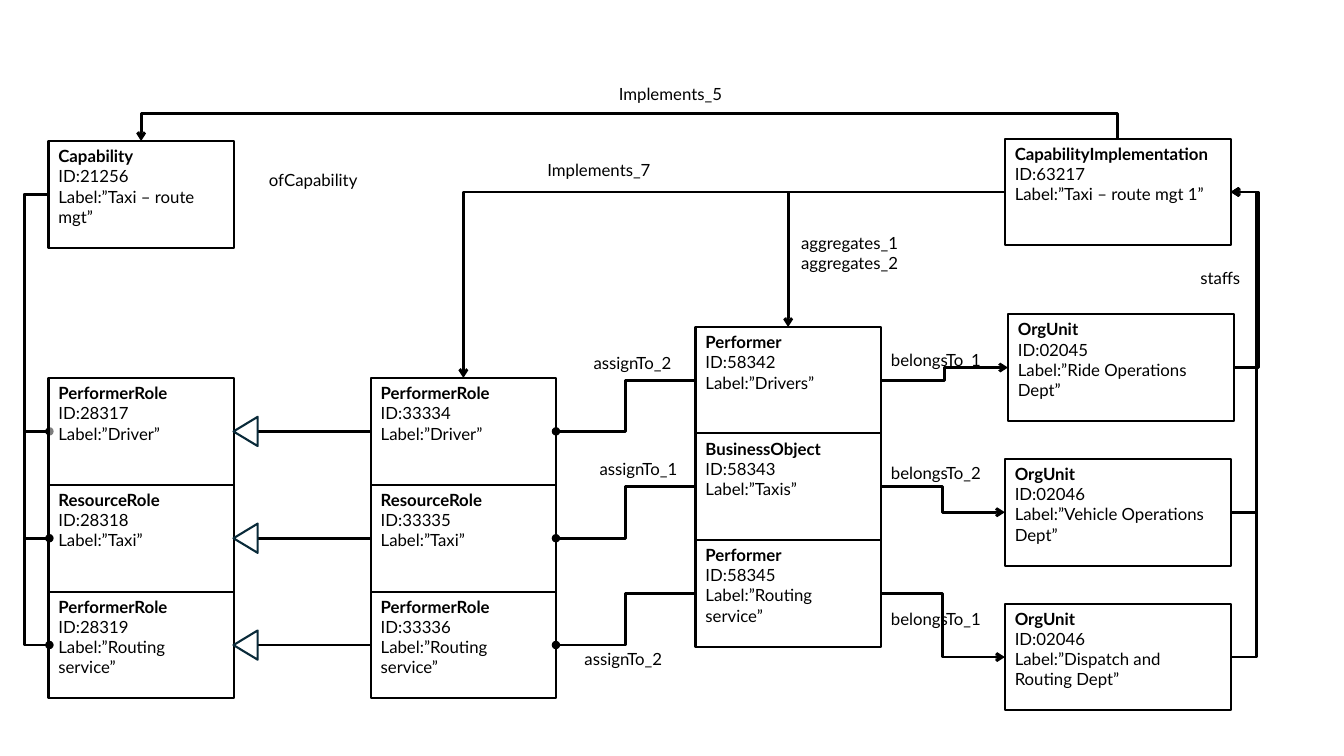
from lxml import etree
from pptx import Presentation
from pptx.dml.color import RGBColor
from pptx.enum.shapes import MSO_CONNECTOR, MSO_SHAPE
from pptx.enum.text import MSO_ANCHOR, MSO_AUTO_SIZE, PP_ALIGN
from pptx.oxml.ns import qn
from pptx.util import Pt

ELBOW, STRAIGHT = MSO_CONNECTOR.ELBOW, MSO_CONNECTOR.STRAIGHT
RECTANGLE, TRIANGLE = MSO_SHAPE.RECTANGLE, MSO_SHAPE.ISOSCELES_TRIANGLE
COLORS = {name: RGBColor.from_string(value) for name, value in
          {"ink": "000000", "paper": "FFFFFF", "triangle": "092A39"}.items()}
FONT = "Lato"

# Layout in points
BOX_WIDTH, WIDE_WIDTH, BOX_HEIGHT = 132.3, 161.3, 76.3
CAPABILITY_X, ROLE_X, PERFORMER_X, UNIT_X = 34.6, 264.8, 496.8, 717.8
CAPABILITY_Y, IMPLEMENTATION_Y = 100.8, 99
ROLE_YS = [270 + 76.3 * row for row in range(3)]
PERFORMER_YS = [233.6 + 76 * row for row in range(3)]
UNIT_YS = [224.4 + 103.4 * row for row in range(3)]
UNIT_XS = [720, UNIT_X, UNIT_X]
HALF = BOX_HEIGHT / 2

presentation = Presentation()
presentation.slide_width, presentation.slide_height = Pt(960), Pt(540)
slide = presentation.slides.add_slide(presentation.slide_layouts[6])
shapes = slide.shapes


def write_lines(shape, lines, bold_first):
    frame = shape.text_frame
    frame.word_wrap = True
    frame.vertical_anchor = MSO_ANCHOR.TOP
    for index, line in enumerate(lines):
        paragraph = frame.paragraphs[0] if index == 0 else frame.add_paragraph()
        paragraph.alignment = PP_ALIGN.LEFT
        run = paragraph.add_run()
        run.text = line
        run.font.name, run.font.size = FONT, Pt(12)
        run.font.bold = bold_first and index == 0
        run.font.color.rgb = COLORS["ink"]


def add_link(kind, begin, end, via=None, marker=None, upright=False):
    """Elbow links turn at via, or at one corner; upright ones leave vertically."""
    ends = [begin, end]
    start, stop = (begin[1], end[1]) if upright else (begin[0], end[0])
    if upright:
        middle_x, middle_y = (begin[0] + end[0]) / 2, (begin[1] + end[1]) / 2
        ends = [(middle_x + y - middle_y, middle_y - x + middle_x) for x, y in ends]
    link = shapes.add_connector(kind, *[Pt(value) for point in ends for value in point])
    link.line.color.rgb, link.line.width = COLORS["ink"], Pt(2)
    properties = link._element.spPr
    geometry = properties.find(qn("a:prstGeom"))
    if upright:
        properties.find(qn("a:xfrm")).set("rot", "5400000")
    if via is not None:
        turn = round((via - start) / (stop - start) * 100000)
        etree.SubElement(geometry.find(qn("a:avLst")), qn("a:gd"),
                         name="adj1", fmla=f"val {turn}")
    elif kind == ELBOW:
        geometry.set("prst", "bentConnector2")
    if marker:
        etree.SubElement(link.line._get_or_add_ln(), qn("a:headEnd"), type=marker)
    etree.SubElement(properties, qn("a:effectLst"))
    return link


# Boxes: name, ID, label, left, top, width, see-through
boxes = [
    ("Capability", "21256", "Taxi – route mgt", CAPABILITY_X, CAPABILITY_Y, BOX_WIDTH, False),
    ("ResourceRole", "28318", "Taxi", CAPABILITY_X, ROLE_YS[1], BOX_WIDTH, True),
    ("PerformerRole", "28319", "Routing service", CAPABILITY_X, ROLE_YS[2], BOX_WIDTH, False),
    ("PerformerRole", "28317", "Driver", CAPABILITY_X, ROLE_YS[0], BOX_WIDTH, True),
    ("CapabilityImplementation", "63217", "Taxi – route mgt 1",
     UNIT_X, IMPLEMENTATION_Y, WIDE_WIDTH, False),
    ("ResourceRole", "33335", "Taxi", ROLE_X, ROLE_YS[1], BOX_WIDTH, True),
    ("PerformerRole", "33336", "Routing service", ROLE_X, ROLE_YS[2], BOX_WIDTH, False),
    ("PerformerRole", "33334", "Driver", ROLE_X, ROLE_YS[0], BOX_WIDTH, True),
    ("Performer", "58342", "Drivers", PERFORMER_X, PERFORMER_YS[0], BOX_WIDTH, False),
    ("BusinessObject", "58343", "Taxis", PERFORMER_X, PERFORMER_YS[1], BOX_WIDTH, False),
    ("Performer", "58345", "Routing service", PERFORMER_X, PERFORMER_YS[2], BOX_WIDTH, False),
    ("OrgUnit", "02045", "Ride Operations Dept", UNIT_XS[0], UNIT_YS[0], WIDE_WIDTH, False),
    ("OrgUnit", "02046", "Vehicle Operations Dept", UNIT_XS[1], UNIT_YS[1], WIDE_WIDTH, False),
    ("OrgUnit", "02046", "Dispatch and Routing Dept", UNIT_XS[2], UNIT_YS[2], WIDE_WIDTH, False),
]
box_by_id = {}
for name, number, label, left, top, width, see_through in boxes:
    # The capability links lie beneath the first role box
    if number == "28317":
        for role_y in ROLE_YS:
            add_link(ELBOW, (35.3, role_y + HALF), (CAPABILITY_X, CAPABILITY_Y + HALF),
                     via=17.5, marker="oval")
    box = shapes.add_shape(RECTANGLE, Pt(left), Pt(top), Pt(width), Pt(BOX_HEIGHT))
    box.shadow.inherit = False
    box.fill.solid()
    box.fill.fore_color.rgb = COLORS["paper"]
    box.line.color.rgb, box.line.width = COLORS["ink"], Pt(1.5)
    if see_through:
        color = box._element.spPr.find(qn("a:solidFill")).find(qn("a:srgbClr"))
        etree.SubElement(color, qn("a:alpha"), val="49000")
    write_lines(box, [name, f"ID:{number}", f"Label:”{label}”"], True)
    box_by_id[number] = box

# Generalisation links with hollow triangles
pairs = [("28317", "33334"), ("28318", "33335"), ("28319", "33336")]
for (general, special), role_y in zip(pairs, ROLE_YS):
    middle = role_y + HALF
    link = add_link(STRAIGHT, (CAPABILITY_X + BOX_WIDTH, middle), (ROLE_X, middle))
    link.begin_connect(box_by_id[general], 3)
    link.end_connect(box_by_id[special], 1)
    triangle = shapes.add_shape(TRIANGLE, Pt(165), Pt(middle - 8.65), Pt(20.9), Pt(17.3))
    triangle.rotation = 270
    triangle.shadow.inherit = False
    triangle.fill.solid()
    triangle.fill.fore_color.rgb = COLORS["paper"]
    triangle.line.color.rgb, triangle.line.width = COLORS["triangle"], Pt(1.5)

# Assignment and membership links
for role_y, performer_y, unit_x, unit_y in zip(ROLE_YS, PERFORMER_YS, UNIT_XS, UNIT_YS):
    performer_middle = performer_y + HALF
    role_right, performer_right = ROLE_X + BOX_WIDTH, PERFORMER_X + BOX_WIDTH
    add_link(ELBOW, (role_right, role_y + HALF), (PERFORMER_X, performer_middle),
             via=(role_right + PERFORMER_X) / 2, marker="oval")
    add_link(ELBOW, (unit_x, unit_y + HALF), (performer_right, performer_middle),
             via=(unit_x + performer_right) / 2, marker="arrow")

# Implementation, aggregation and staffing links
implementation_middle = IMPLEMENTATION_Y + HALF
for left, top in [(ROLE_X, ROLE_YS[0]), (PERFORMER_X, PERFORMER_YS[0])]:
    add_link(ELBOW, (left + BOX_WIDTH / 2, top), (UNIT_X, implementation_middle),
             marker="arrow", upright=True)
add_link(ELBOW, (CAPABILITY_X + BOX_WIDTH / 2, CAPABILITY_Y),
         (UNIT_X + WIDE_WIDTH / 2, IMPLEMENTATION_Y), via=81.4, marker="arrow", upright=True)
for unit_right, unit_y, via in zip([881.3, 880.2, 880.2], UNIT_YS, [899, 897.4, 897.4]):
    add_link(ELBOW, (UNIT_X + WIDE_WIDTH, implementation_middle),
             (unit_right, unit_y + HALF), via=via, marker="arrow")

# Link labels: lines, left, top, width
labels = [
    (["ofCapability"], 185, 117.4, 80),
    (["Implements_7"], 383.8, 110.9, 96),
    (["Implements_5"], 434.9, 56.2, 90),
    (["assignTo_2"], 416.9, 248.4, 80),
    (["assignTo_1"], 421.2, 324, 80),
    (["assignTo_2"], 410.4, 460, 80),
    (["belongsTo_1"], 629.3, 246.2, 80),
    (["belongsTo_2"], 629.3, 326.9, 80),
    (["belongsTo_1"], 629.3, 431.3, 80),
    (["aggregates_1", "aggregates_2"], 565.2, 162.7, 88),
    (["staffs"], 850.3, 187.9, 50),
]
for lines, left, top, width in labels:
    label_box = shapes.add_textbox(Pt(left), Pt(top), Pt(width), Pt(7.2 + 14.4 * len(lines)))
    write_lines(label_box, lines, False)
    label_box.text_frame.auto_size = MSO_AUTO_SIZE.SHAPE_TO_FIT_TEXT

presentation.save("out.pptx")
